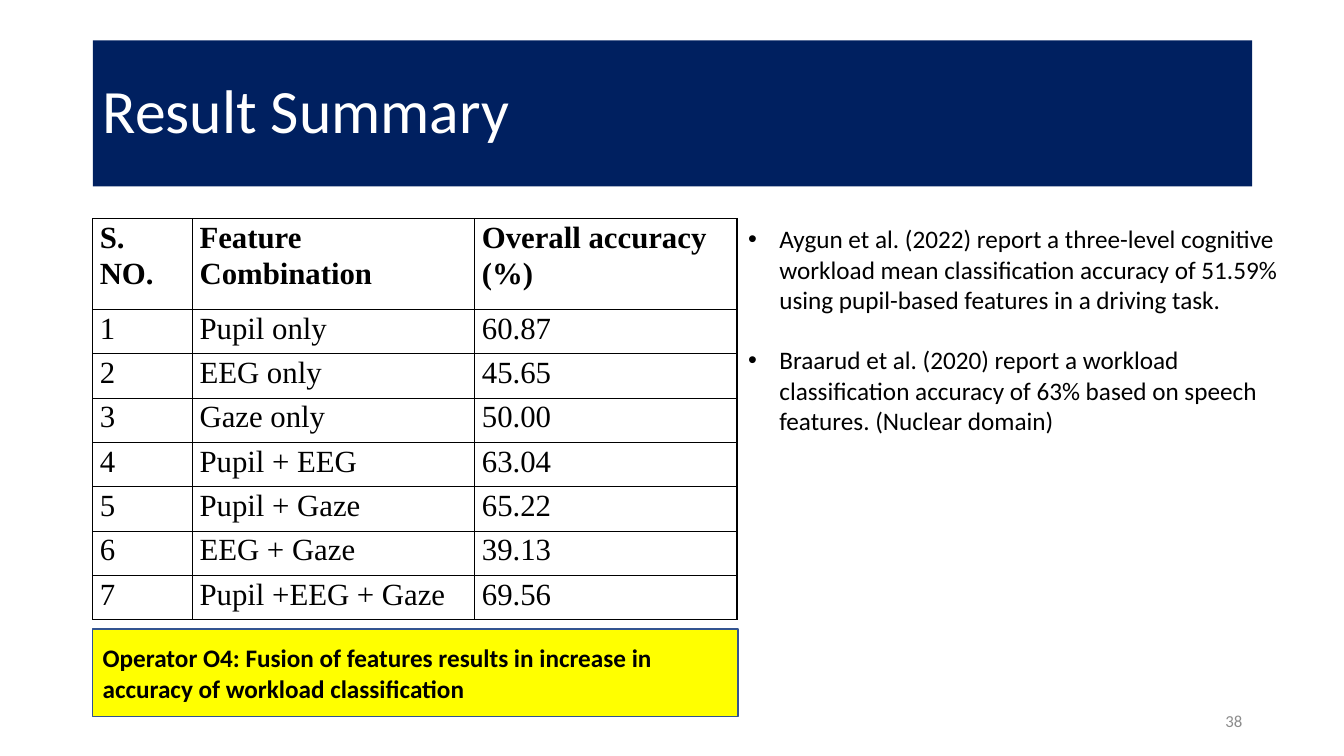
from lxml import etree
from pptx import Presentation
from pptx.dml.color import RGBColor
from pptx.enum.shapes import MSO_SHAPE
from pptx.enum.text import MSO_ANCHOR, MSO_AUTO_SIZE, PP_ALIGN
from pptx.oxml.ns import qn
from pptx.util import Inches, Pt

RECT = MSO_SHAPE.RECTANGLE
MIDDLE, TOP = MSO_ANCHOR.MIDDLE, MSO_ANCHOR.TOP
LEFT, RIGHT = PP_ALIGN.LEFT, PP_ALIGN.RIGHT
FIXED = MSO_AUTO_SIZE.NONE

NAVY = RGBColor(0x00, 0x20, 0x60)
WHITE = RGBColor(0xFF, 0xFF, 0xFF)
BLACK = RGBColor(0x00, 0x00, 0x00)
YELLOW = RGBColor(0xFF, 0xFF, 0x00)
BLUE = RGBColor(0x32, 0x54, 0x91)
GRAY = RGBColor(0x8C, 0x8C, 0x8C)
SANS, SERIF = "Calibri", "Times New Roman"

# Content
TITLE = "Result Summary"
RESULTS = [
    ("S. NO.", "Feature Combination", "Overall accuracy (%)"),
    ("1", "Pupil only", "60.87"),
    ("2", "EEG only", "45.65"),
    ("3", "Gaze only", "50.00"),
    ("4", "Pupil + EEG", "63.04"),
    ("5", "Pupil + Gaze", "65.22"),
    ("6", "EEG + Gaze", "39.13"),
    ("7", "Pupil +EEG + Gaze", "69.56"),
]
FINDING = ("Operator O4: Fusion of features results in increase in "
           "accuracy of workload classification")
STUDIES = [
    "Aygun et al. (2022) report a three-level cognitive workload mean "
    "classification accuracy of 51.59% using pupil-based features in a "
    "driving task.",
    "Braarud et al. (2020) report a workload classification accuracy of "
    "63% based on speech features. (Nuclear domain)",
]
PAGE = "38"

# Layout in inches
EDGE, HEAD, WIDE = 0.92, 2.17, 6.4
COLS = (0.99, 2.8, 2.6)
ROWS = [0.9] + [0.44] * (len(RESULTS) - 1)


def place(shape, *box):
    shape.left, shape.top, shape.width, shape.height = map(Inches, box)


def add_run(para, text, size, color, font=SANS, bold=False):
    run = para.add_run()
    run.text = text
    run.font.size, run.font.name, run.font.bold = Pt(size), font, bold
    run.font.color.rgb = color


def set_frame(frame, anchor):
    frame.word_wrap = True
    frame.auto_size = FIXED
    frame.vertical_anchor = anchor


def add_bullet(para, indent):
    props = para._p.get_or_add_pPr()
    props.set("marL", str(Inches(indent)))
    props.set("indent", str(-Inches(indent)))
    etree.SubElement(props, qn("a:buFont"), typeface="Arial")
    etree.SubElement(props, qn("a:buChar"), char="•")


def add_border(cell):
    props = cell._tc.get_or_add_tcPr()
    for i, side in enumerate(("lnL", "lnR", "lnT", "lnB")):
        line = etree.Element(qn("a:" + side), w=str(Pt(1)))
        fill = etree.SubElement(line, qn("a:solidFill"))
        etree.SubElement(fill, qn("a:srgbClr"), val=str(BLACK))
        props.insert(i, line)


def add_title(slide):
    title = slide.shapes.title
    place(title, EDGE, 0.4, 11.5, 1.45)
    title.fill.solid()
    title.fill.fore_color.rgb = NAVY
    set_frame(title.text_frame, MIDDLE)
    para = title.text_frame.paragraphs[0]
    para.alignment, para.line_spacing = LEFT, 0.9
    add_run(para, TITLE, 44, WHITE)


def add_results(slide):
    box = map(Inches, (EDGE, HEAD, sum(COLS), sum(ROWS)))
    table = slide.shapes.add_table(len(ROWS), len(COLS), *box).table
    for col, width in zip(table.columns, COLS):
        col.width = Inches(width)
    for r, (height, texts) in enumerate(zip(ROWS, RESULTS)):
        table.rows[r].height = Inches(height)
        for c, text in enumerate(texts):
            cell = table.cell(r, c)
            cell.margin_left = cell.margin_right = Inches(0.07)
            cell.margin_top = cell.margin_bottom = 0
            cell.fill.background()
            add_border(cell)
            para = cell.text_frame.paragraphs[0]
            para.line_spacing, para.space_after = 1.07, Pt(8)
            add_run(para, text, 22, BLACK, SERIF, r == 0)


def add_finding(slide):
    box = map(Inches, (EDGE, 6.24, WIDE, 0.87))
    note = slide.shapes.add_shape(RECT, *box)
    note.shadow.inherit = False
    note.fill.solid()
    note.fill.fore_color.rgb = YELLOW
    note.line.color.rgb = BLUE
    note.line.width = Pt(1)
    set_frame(note.text_frame, MIDDLE)
    para = note.text_frame.paragraphs[0]
    para.alignment = LEFT
    add_run(para, FINDING, 18, BLACK, bold=True)


def add_studies(slide):
    body = slide.placeholders[1]
    place(body, EDGE + WIDE, HEAD, 5.8, 2.22)
    frame = body.text_frame
    set_frame(frame, TOP)
    for i, text in enumerate(STUDIES):
        para = frame.add_paragraph() if i else frame.paragraphs[0]
        para.space_before = Pt(21.6 if i else 0)
        add_bullet(para, 0.31)
        add_run(para, text, 18, BLACK)


def add_page(slide):
    box = slide.shapes.add_textbox(*map(Inches, (9.42, 6.95, 3, 0.4)))
    set_frame(box.text_frame, MIDDLE)
    para = box.text_frame.paragraphs[0]
    para.alignment = RIGHT
    add_run(para, PAGE, 12, GRAY)


def main():
    deck = Presentation()
    deck.slide_width, deck.slide_height = Inches(13.33), Inches(7.5)
    slide = deck.slides.add_slide(deck.slide_layouts[1])
    add_title(slide)
    add_results(slide)
    add_finding(slide)
    add_studies(slide)
    add_page(slide)
    deck.save("out.pptx")


if __name__ == "__main__":
    main()
